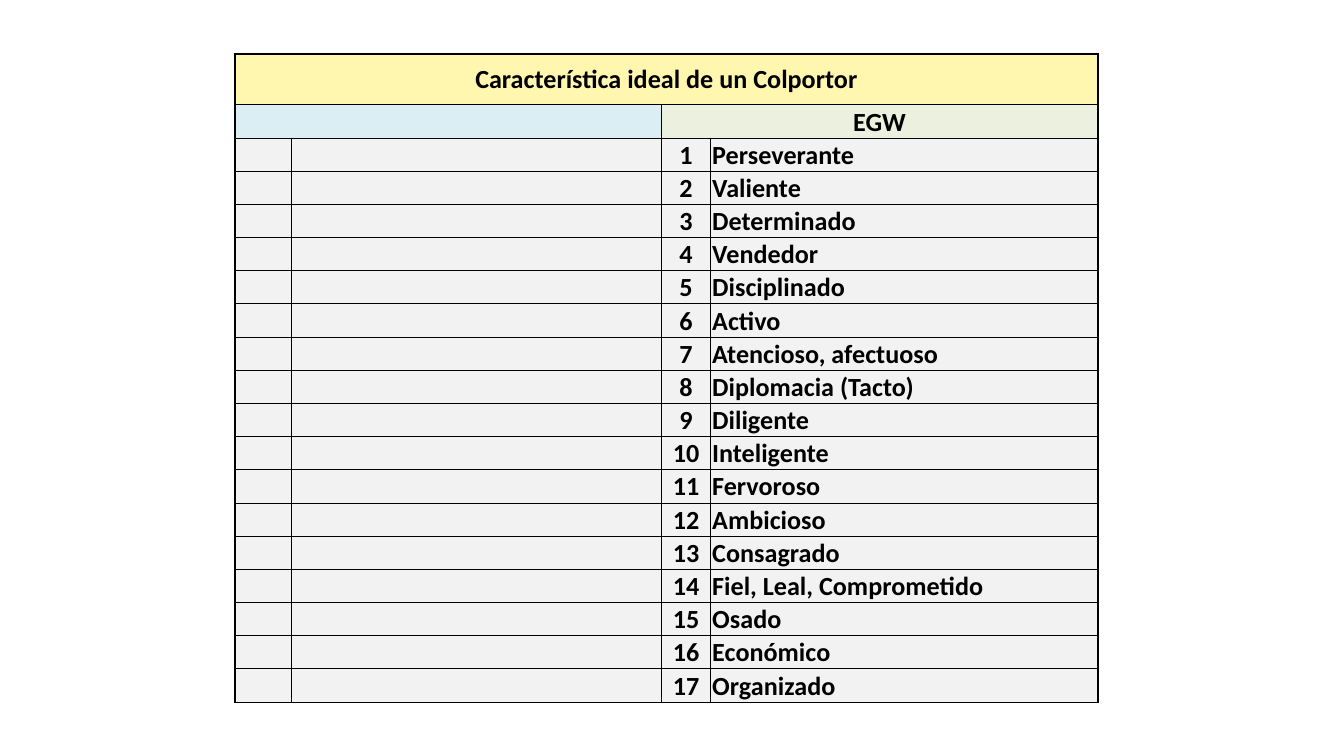
from lxml import etree
from pptx import Presentation
from pptx import util as u
from pptx.dml.color import RGBColor
from pptx.enum import text
from pptx.oxml.ns import qn

COLORS = {
    "ink": "000000",
    "title": "FFF6B0",
    "left": "DAEEF3",
    "right": "EBF1DE",
    "body": "F2F2F2",
}
FONT_SIZE = 14
COLUMN_WIDTHS = [0.42, 2.75, 0.37, 2.88]
TITLE_HEIGHT = 0.38
HEADING_HEIGHT = 0.24
TRAIT_HEIGHT = 0.16
TABLE_HEIGHT = 4.74
TRAITS = [
    "Perseverante", "Valiente", "Determinado", "Vendedor", "Disciplinado",
    "Activo", "Atencioso, afectuoso", "Diplomacia (Tacto)", "Diligente",
    "Inteligente", "Fervoroso", "Ambicioso", "Consagrado",
    "Fiel, Leal, Comprometido", "Osado", "Económico", "Organizado",
]


def write_text(cell, content, align=text.PP_ALIGN.LEFT, anchor=text.MSO_ANCHOR.BOTTOM):
    cell.margin_left = cell.margin_right = cell.margin_top = u.Inches(0.01)
    cell.margin_bottom = 0
    cell.vertical_anchor = anchor
    para = cell.text_frame.paragraphs[0]
    para.alignment = align
    if not content:
        ending = etree.SubElement(para._p, qn("a:endParaRPr"))
        ending.set("sz", str(FONT_SIZE * 100))
        return
    span = para.add_run()
    span.text = content
    span.font.name = "Calibri"
    span.font.size = u.Pt(FONT_SIZE)
    span.font.bold = True
    span.font.color.rgb = RGBColor.from_string(COLORS["ink"])


def draw_borders(cell, widths):
    properties = cell._tc.get_or_add_tcPr()
    for side, width in zip("LRTB", widths):
        line = etree.SubElement(properties, qn("a:ln" + side), w=str(u.Pt(width)))
        fill = etree.SubElement(line, qn("a:solidFill"))
        etree.SubElement(fill, qn("a:srgbClr"), val=COLORS["ink"])


def format_cell(table, row, column, content="", color="body", span=1, **layout):
    cell = table.cell(row, column)
    if span > 1:
        cell.merge(table.cell(row, column + span - 1))
    for offset in range(1, span):
        write_text(table.cell(row, column + offset), "")
    write_text(cell, content, **layout)
    at_right = column + span == len(COLUMN_WIDTHS)
    draw_borders(cell, [
        1 if column == 0 else 0.5,
        1 if at_right else 0.5,
        1 if row == 0 else 0.5,
        0.5,
    ])
    cell.fill.solid()
    cell.fill.fore_color.rgb = RGBColor.from_string(COLORS[color])


def add_trait_table(page):
    heights = [TITLE_HEIGHT, HEADING_HEIGHT] + [TRAIT_HEIGHT] * len(TRAITS)
    frame = page.shapes.add_table(
        len(heights), len(COLUMN_WIDTHS), u.Inches(1.75), u.Inches(0.4),
        u.Inches(sum(COLUMN_WIDTHS)), u.Inches(TABLE_HEIGHT),
    )
    table = frame.table
    table.first_row = table.horz_banding = False
    for column, width in zip(table.columns, COLUMN_WIDTHS):
        column.width = u.Inches(width)
    for row, height in zip(table.rows, heights):
        row.height = u.Inches(height)
    frame.height = u.Inches(TABLE_HEIGHT)

    heading = {"align": text.PP_ALIGN.CENTER, "anchor": text.MSO_ANCHOR.MIDDLE}
    format_cell(table, 0, 0, "Característica ideal de un Colportor", "title", 4, **heading)
    format_cell(table, 1, 0, "", "left", 2, **heading)
    format_cell(table, 1, 2, "EGW", "right", 2, **heading)
    for number, trait in enumerate(TRAITS, 1):
        row = number + 1
        format_cell(table, row, 0)
        format_cell(table, row, 1)
        format_cell(table, row, 2, str(number), align=text.PP_ALIGN.CENTER)
        format_cell(table, row, 3, trait)


def main():
    deck = Presentation()
    deck.slide_width = u.Inches(10)
    deck.slide_height = deck.slide_width * 9 // 16
    page = deck.slides.add_slide(deck.slide_layouts[6])
    add_trait_table(page)
    deck.save("out.pptx")


if __name__ == "__main__":
    main()
